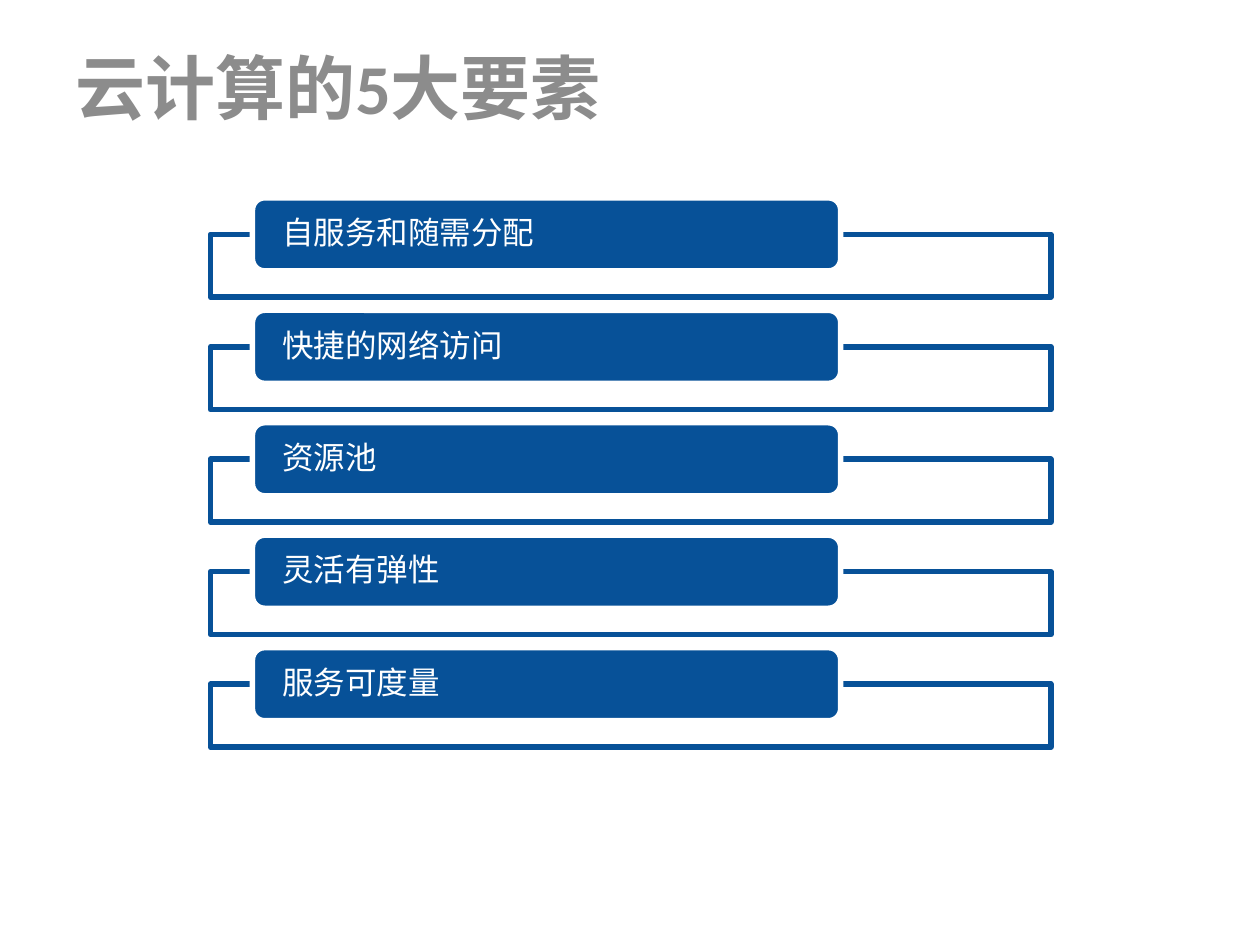
from dataclasses import dataclass

from lxml.etree import SubElement
from pptx import Presentation
from pptx.dml.color import RGBColor
from pptx.enum.shapes import MSO_SHAPE
from pptx.enum.text import MSO_ANCHOR, PP_ALIGN
from pptx.oxml.ns import qn
from pptx.util import Inches, Pt


@dataclass(frozen=True)
class Theme:
    font: str = "Calibri"
    blue: str = "075198"
    white: str = "FFFFFF"
    gray: str = "8C8C8C"
    head: int = 40
    body: int = 18
    edge: float = 3.15


THEME = Theme()
ITEMS = ["自服务和随需分配", "快捷的网络访问", "资源池", "灵活有弹性", "服务可度量"]


def write(shape, text, size, color, bold=False, anchor=MSO_ANCHOR.MIDDLE,
          inset=(0.1, 0.05), space=1.0):
    frame = shape.text_frame
    frame.word_wrap = True
    frame.vertical_anchor = anchor
    frame.margin_left = frame.margin_right = Inches(inset[0])
    frame.margin_top = frame.margin_bottom = Inches(inset[1])
    para = frame.paragraphs[0]
    para.alignment = PP_ALIGN.LEFT
    para.line_spacing = space
    run = para.add_run()
    run.text = text
    run.font.name = THEME.font
    run.font.size = Pt(size)
    run.font.bold = bold
    run.font.color.rgb = RGBColor.from_string(color)


def block(slide, kind, box, fill, line, alpha=None):
    shape = slide.shapes.add_shape(kind, *map(Inches, box))
    shape.shadow.inherit = False
    shape.fill.solid()
    shape.fill.fore_color.rgb = RGBColor.from_string(fill)
    shape.line.color.rgb = RGBColor.from_string(line)
    shape.line.width = Pt(THEME.edge)
    if alpha:
        color = shape.fill._xPr.find(qn("a:solidFill"))[0]
        SubElement(color, qn("a:alpha"), val=str(alpha * 1000))
    return shape


def title(slide, text, box):
    shape = slide.shapes.title
    shape.left, shape.top, shape.width, shape.height = map(Inches, box)
    write(shape, text, THEME.head, THEME.gray, bold=True, anchor=MSO_ANCHOR.TOP)


def row(slide, text, box):
    left, top, width, height = box
    bar = 0.58
    drop = bar / 2
    block(slide, MSO_SHAPE.RECTANGLE, (left, top + drop, width, height - drop),
          THEME.white, THEME.blue, alpha=90)
    label = block(slide, MSO_SHAPE.ROUNDED_RECTANGLE,
                  (left + width * 0.05, top, width * 0.7, bar),
                  THEME.blue, THEME.white)
    write(label, text, THEME.body, THEME.white, inset=(0.21, 0), space=0.9)


def rows(slide, items, box):
    left, top, width, height = box
    tall = 0.79
    step = (height - tall) / (len(items) - 1)
    for i, text in enumerate(items):
        row(slide, text, (left, top + i * step, width, tall))


def main():
    deck = Presentation()
    deck.slide_width, deck.slide_height = Inches(10), Inches(7.5)
    slide = deck.slides.add_slide(deck.slide_layouts[5])
    title(slide, "云计算的5大要素", (0.5, 0.3, 9, 1.25))
    rows(slide, ITEMS, (1.67, 1.57, 6.67, 4.36))
    deck.save("out.pptx")


if __name__ == "__main__":
    main()
